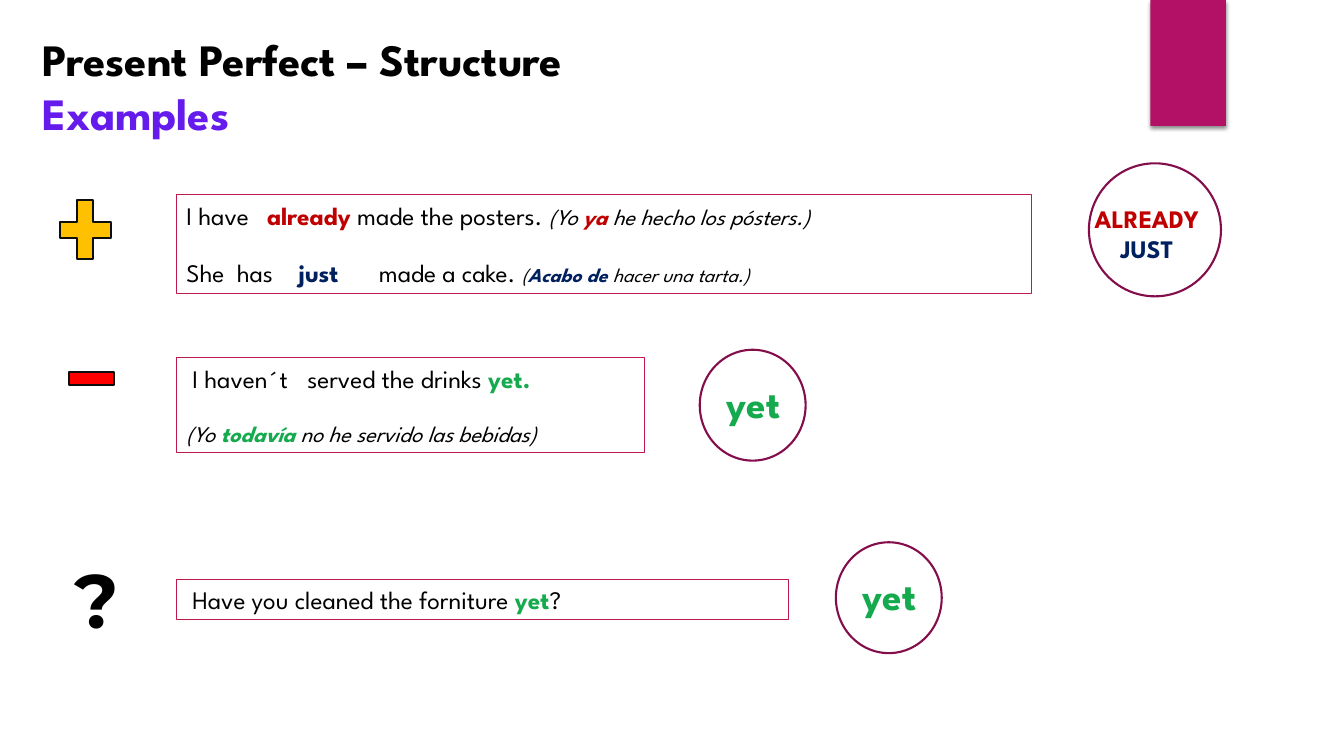
from lxml import etree
from pptx import Presentation
from pptx.dml.color import RGBColor
from pptx.enum.shapes import MSO_SHAPE
from pptx.enum.text import MSO_ANCHOR, PP_ALIGN
from pptx.oxml.ns import qn
from pptx.util import Inches, Pt

RECT, OVAL = MSO_SHAPE.RECTANGLE, MSO_SHAPE.OVAL
PLUS, MINUS = MSO_SHAPE.MATH_PLUS, MSO_SHAPE.MATH_MINUS
MIDDLE, TOP = MSO_ANCHOR.MIDDLE, MSO_ANCHOR.TOP
LEFT, CENTER = PP_ALIGN.LEFT, PP_ALIGN.CENTER

THEME = {
    "font": "League Spartan", "symbol_font": "Montserrat",
    "black": "000000", "white": "FFFFFF", "red": "C00000", "navy": "002060",
    "green": "16AA4E", "violet": "651BEB", "accent": "B31166",
    "box": "BD1B4C", "ring": "840D4B", "outline": "0D0D0D",
    "plus": "FFC000", "minus": "FF0000",
    "title": 32, "yet": 28, "body": 18, "note": 16, "small": 14, "symbol": 54,
}

# A run is (text, size, colour, style); style holds b for bold and i for italic.
TITLE = [
    {"runs": [("Present Perfect – Structure", "title", "black", "b")]},
    {"runs": [("Examples", "title", "violet", "b")]},
]
# Tab stops, indent and box places are in inches.
COLUMN = 1.75
EXAMPLES = [
    {"at": (COLUMN, 1.93, 8.48, 0.98), "lines": [
        {"tabs": [0.8], "runs": [
            ("I have\t", "body", "black", ""),
            ("already", "body", "red", "b"),
            (" made the posters. ", "body", "black", ""),
            ("(Yo ", "note", "black", "i"),
            ("ya", "note", "red", "bi"),
            (" he hecho los pósters.)", "note", "black", "i")]},
        {"tabs": [0.5, 1.11, 1.91], "gap": 19.5, "runs": [
            ("She\thas\t", "body", "black", ""),
            ("just\t", "body", "navy", "b"),
            ("made a cake. ", "body", "black", ""),
            ("(", "small", "black", "i"),
            ("Acabo de ", "small", "navy", "bi"),
            ("hacer una tarta.)", "small", "black", "i")]}]},
    {"at": (COLUMN, 3.55, 4.64, 0.94), "lines": [
        {"indent": 0.06, "tabs": [1.14], "runs": [
            ("I haven´t\tserved the drinks ", "body", "black", ""),
            ("yet.", "body", "green", "b")]},
        {"gap": 19.5, "runs": [
            ("(Yo ", "note", "black", "i"),
            ("todavía", "note", "green", "bi"),
            (" no he servido las bebidas)", "note", "black", "i")]}]},
    {"at": (COLUMN, 5.75, 6.07, 0.4), "lines": [
        {"indent": 0.06, "runs": [
            ("Have you cleaned the forniture ", "body", "black", ""),
            ("yet", "body", "green", "b"),
            ("?", "body", "black", "")]}]},
]
SIGNS = [(PLUS, (0.5, 1.88, 0.69, 0.8), "plus"),
         (MINUS, (0.6, 3.47, 0.61, 0.57), "minus")]
QUESTION = [{"runs": [("?", "symbol", "black", "b")]}]
ADVERBS = [{"align": CENTER, "runs": [("ALREADY", "body", "red", "b")]},
           {"align": CENTER, "runs": [("JUST", "body", "navy", "b")]}]
YET = [{"runs": [("yet", "yet", "green", "b")]}]
# Ring place, label place, label lines
RINGS = [((10.8, 1.62, 1.31, 1.32), (10.72, 1.97, 1.31, 0.71), ADVERBS)]
RINGS += [((x, y, 1.05, 1.1), (x + 0.17, y + 0.24, 0.82, 0.57), YET)
          for x, y in ((6.94, 3.47), (8.29, 5.38))]


def color(name):
    return RGBColor.from_string(THEME[name])


def add_shape(slide, kind, at, fill=None, line=None, width=1.5):
    sp = slide.shapes.add_shape(kind, *map(Inches, at))
    sp.shadow.inherit = False
    if fill:
        sp.fill.solid()
        sp.fill.fore_color.rgb = color(fill)
    else:
        sp.fill.background()
    if line:
        sp.line.color.rgb = color(line)
        sp.line.width = Pt(width)
    else:
        sp.line.fill.background()
    return sp


def set_tabs(p, stops):
    tabs = etree.SubElement(p._p.get_or_add_pPr(), qn("a:tabLst"))
    for stop in stops:
        etree.SubElement(tabs, qn("a:tab"), pos=str(Inches(stop)), algn="l")


def write(sp, lines, anchor=TOP, wrap=True, font="font"):
    tf = sp.text_frame
    tf.word_wrap, tf.vertical_anchor = wrap, anchor
    for n, line in enumerate(lines):
        p = tf.add_paragraph() if n else tf.paragraphs[0]
        p.alignment = line.get("align", LEFT)
        if "gap" in line:
            p.space_before = Pt(line["gap"])
        if "indent" in line:
            p._p.get_or_add_pPr().set("marL", str(Inches(line["indent"])))
        if "tabs" in line:
            set_tabs(p, line["tabs"])
        for text, size, tint, style in line["runs"]:
            r = p.add_run()
            r.text = text
            values = {"name": THEME[font], "size": Pt(THEME[size]),
                      "bold": "b" in style, "italic": "i" in style}
            for key, value in values.items():
                setattr(r.font, key, value)
            r.font.color.rgb = color(tint)


def add_label(slide, at, lines, **options):
    write(slide.shapes.add_textbox(*map(Inches, at)), lines, **options)


def drop_shadow(sp):
    effects = sp._element.spPr.find(qn("a:effectLst"))
    shadow = etree.SubElement(effects, qn("a:outerShdw"), blurRad=str(Pt(3)),
                              dist=str(Pt(2)), dir="5400000", rotWithShape="0")
    black = etree.SubElement(shadow, qn("a:srgbClr"), val=THEME["black"])
    etree.SubElement(black, qn("a:alpha"), val="45000")


def main():
    prs = Presentation()
    prs.slide_width, prs.slide_height = Inches(13.33), Inches(7.5)
    slide = prs.slides.add_slide(prs.slide_layouts[6])

    drop_shadow(add_shape(slide, RECT, (11.41, 0, 0.75, 1.25), "accent"))
    add_label(slide, (0.32, 0.27, 10.41, 1.18), TITLE)
    for example in EXAMPLES:
        box = add_shape(slide, RECT, example["at"], line="box", width=0.75)
        write(box, example["lines"], anchor=MIDDLE)
    for kind, at, fill in SIGNS:
        add_shape(slide, kind, at, fill, "outline")
    add_label(slide, (0.64, 5.44, 0.66, 1.01), QUESTION,
              wrap=False, font="symbol_font")
    for ring, label, lines in RINGS:
        add_shape(slide, OVAL, ring, "white", "ring")
        add_label(slide, label, lines)
    prs.save("out.pptx")


if __name__ == "__main__":
    main()
